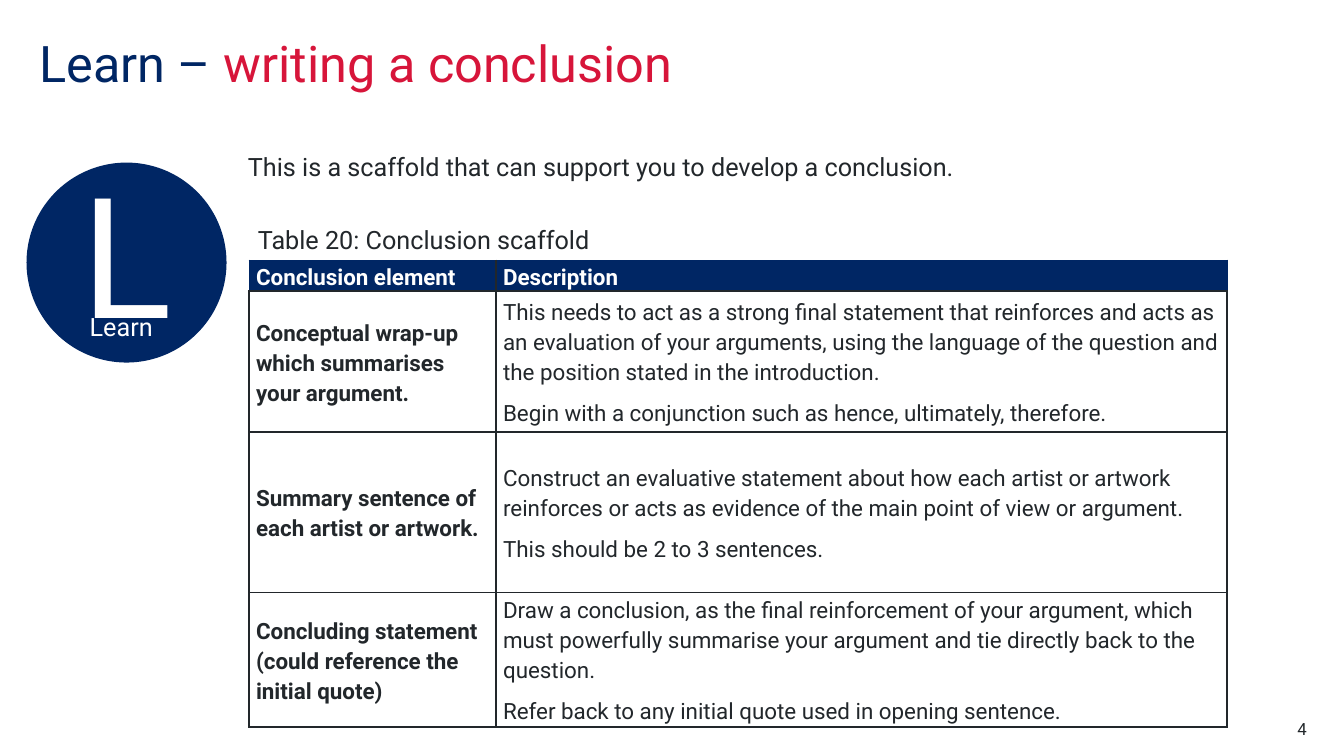
import pptx
import pptx.util
import pptx.dml.color
import pptx.enum.shapes
import pptx.enum.text
import lxml.etree
from dataclasses import dataclass

Inches = pptx.util.Inches
Pt = pptx.util.Pt
RGBColor = pptx.dml.color.RGBColor
Align = pptx.enum.text.PP_ALIGN
Anchor = pptx.enum.text.MSO_ANCHOR

NAVY = RGBColor(0x00, 0x26, 0x64)
RED = RGBColor(0xD7, 0x15, 0x3A)
INK = RGBColor(0x22, 0x27, 0x2B)
WHITE = RGBColor(0xFF, 0xFF, 0xFF)
FONT = "Roboto"


@dataclass
class Label:
    box: tuple[float, float, float, float]
    runs: list[tuple[str, RGBColor]]
    size: float = 18
    inset: tuple[float, float] = (0, 0)
    align: Align = Align.LEFT
    anchor: Anchor = Anchor.TOP
    line: float = 1.0


@dataclass
class Row:
    high: float
    head: str
    notes: list[str]


LABELS = [
    Label((0.39, 0.39, 11.02, 1.1),
          [("Learn – ", NAVY), ("writing a conclusion", RED)], 36, line=0.9),
    Label((0.89, 3.09, 0.73, 0.48), [("Learn", WHITE)]),
    Label((2.46, 1.5, 9.7, 0.5),
          [("This is a scaffold that can support you to develop a conclusion.", INK)]),
    Label((2.46, 2.18, 4.87, 0.4), [("Table 20: Conclusion scaffold", INK)],
          inset=(0.1, 0.05), anchor=Anchor.MIDDLE),
    Label((12.17, 7.13, 0.79, 0.2), [("4", INK)], 12, align=Align.RIGHT),
]

ROWS = [
    Row(0.3, "Conclusion element", ["Description"]),
    Row(1.4, "Conceptual wrap-up which summarises your argument.", [
        "This needs to act as a strong final statement that reinforces and acts as an "
        "evaluation of your arguments, using the language of the question and the "
        "position stated in the introduction.",
        "Begin with a conjunction such as hence, ultimately, therefore."]),
    Row(1.59, "Summary sentence of each artist or artwork.", [
        "Construct an evaluative statement about how each artist or artwork reinforces "
        "or acts as evidence of the main point of view or argument.",
        "This should be 2 to 3 sentences."]),
    Row(1.33, "Concluding statement (could reference the initial quote)", [
        "Draw a conclusion, as the final reinforcement of your argument, which must "
        "powerfully summarise your argument and tie directly back to the question.",
        "Refer back to any initial quote used in opening sentence."]),
]
COLS = [2.45, 7.25]


def apply(item, values: dict) -> None:
    for name, value in values.items():
        setattr(item, name, value)


def style(font, size: float, color: RGBColor, bold: bool = False) -> None:
    apply(font, {"name": FONT, "size": Pt(size), "bold": bold})
    font.color.rgb = color


def margins(side: float, top: float) -> dict:
    return {"margin_left": Inches(side), "margin_right": Inches(side),
            "margin_top": Inches(top), "margin_bottom": Inches(top)}


def write(slide, label: Label) -> None:
    frame = slide.shapes.add_textbox(*map(Inches, label.box)).text_frame
    apply(frame, {"word_wrap": True, "vertical_anchor": label.anchor,
                  **margins(*label.inset)})
    para = frame.paragraphs[0]
    apply(para, {"alignment": label.align, "line_spacing": label.line})
    for text, color in label.runs:
        run = para.add_run()
        run.text = text
        style(run.font, label.size, color)


def badge(slide) -> None:
    oval = slide.shapes.add_shape(pptx.enum.shapes.MSO_SHAPE.OVAL,
                                  *map(Inches, (0.27, 1.62, 1.97, 1.97)))
    oval.shadow.inherit = False
    oval.fill.solid()
    oval.fill.fore_color.rgb = NAVY
    oval.line.color.rgb = NAVY
    oval.line.width = Pt(1)
    frame = oval.text_frame
    apply(frame, {"vertical_anchor": Anchor.MIDDLE, "margin_bottom": Inches(0.28)})
    para = frame.paragraphs[0]
    para.alignment = Align.CENTER
    run = para.add_run()
    run.text = "L"
    style(run.font, 120, WHITE)


def edge(cell, tag: str, color: RGBColor, width: float) -> None:
    ns = pptx.oxml.ns.qn
    line = lxml.etree.SubElement(cell._tc.get_or_add_tcPr(), ns("a:" + tag),
                                 w=str(int(Pt(width))))
    fill = lxml.etree.SubElement(line, ns("a:solidFill"))
    lxml.etree.SubElement(fill, ns("a:srgbClr"), val=str(color))


def fill_cell(cell, texts: list[str], top: bool, first: bool) -> None:
    apply(cell, {"vertical_anchor": Anchor.MIDDLE, **margins(0.07, 0)})
    # Borders come before the fill
    for tag in ("lnL", "lnR", "lnT", "lnB"):
        inner = tag == ("lnR" if first else "lnL")
        if top and tag != "lnB" and not inner:
            edge(cell, tag, NAVY, 0.5)
        else:
            edge(cell, tag, INK, 1)
    if top:
        cell.fill.solid()
        cell.fill.fore_color.rgb = NAVY
    else:
        cell.fill.background()
    frame = cell.text_frame
    for n, text in enumerate(texts):
        para = frame.add_paragraph() if n else frame.paragraphs[0]
        apply(para, {"line_spacing": 1.15, "space_after": Pt(4),
                     "space_before": Pt(4 if n else 0)})
        run = para.add_run()
        run.text = text
        style(run.font, 16, WHITE if top else INK, top or first)


def grid(slide) -> None:
    high = sum(row.high for row in ROWS)
    box = map(Inches, (2.47, 2.58, sum(COLS), high))
    table = slide.shapes.add_table(len(ROWS), len(COLS), *box).table
    apply(table, {"first_row": True, "horz_banding": False})
    for col, width in zip(table.columns, COLS):
        col.width = Inches(width)
    for r, row in enumerate(ROWS):
        table.rows[r].height = Inches(row.high)
        for c, texts in enumerate(([row.head], row.notes)):
            fill_cell(table.cell(r, c), texts, r == 0, c == 0)


def main() -> None:
    deck = pptx.Presentation()
    apply(deck, {"slide_width": Inches(13.33), "slide_height": Inches(7.5)})
    slide = deck.slides.add_slide(deck.slide_layouts[6])
    # Circle, then the text on and around it
    badge(slide)
    for label in LABELS:
        write(slide, label)
    # Scaffold table
    grid(slide)
    deck.save("out.pptx")


if __name__ == "__main__":
    main()
